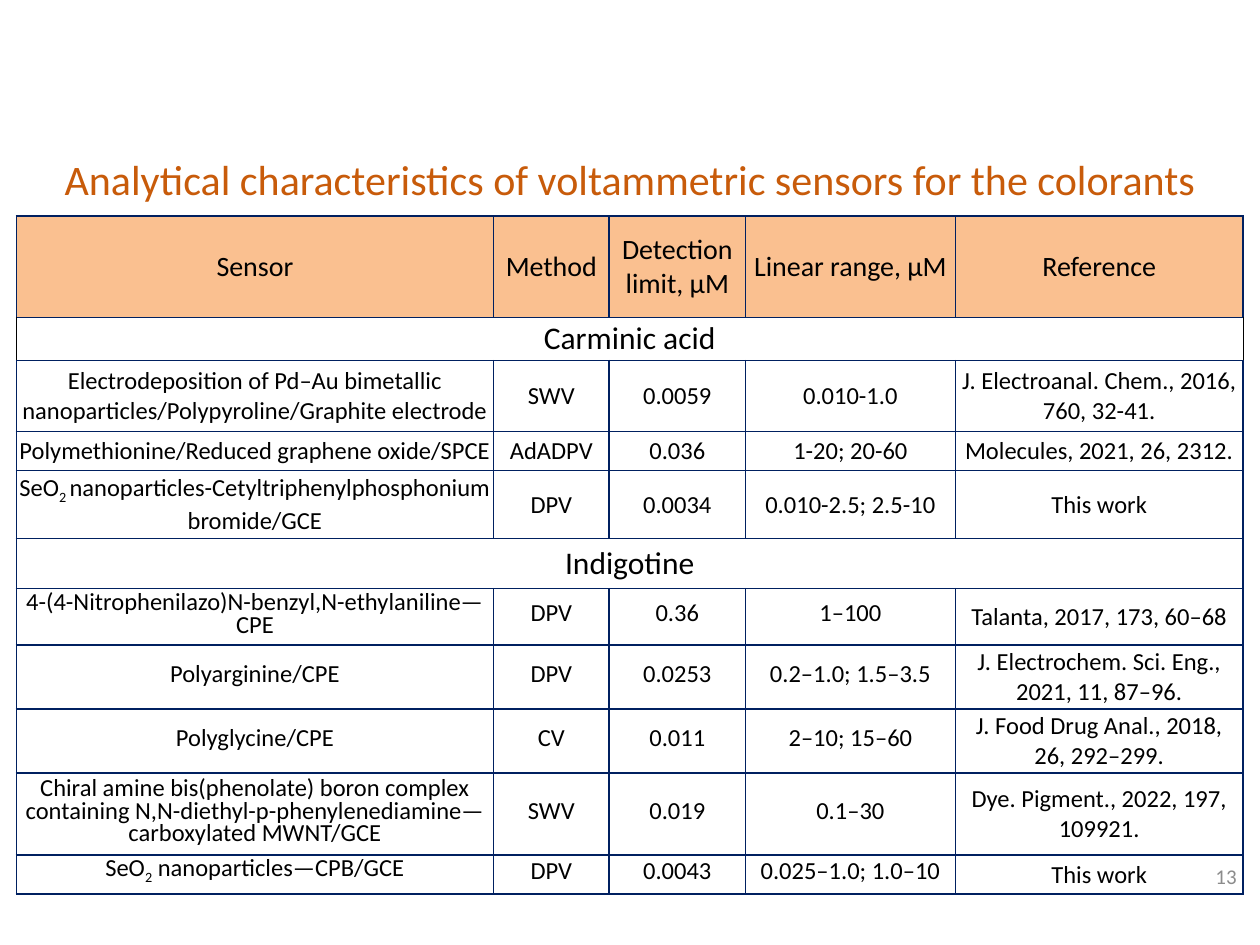
"""Build a slide with a table comparing voltammetric sensors for two colorants."""
from dataclasses import dataclass

from lxml.etree import SubElement
from pptx import Presentation
from pptx.dml.color import RGBColor as RGB
from pptx.enum.text import MSO_ANCHOR as Anchor, MSO_AUTO_SIZE as AutoSize, PP_ALIGN as Align
from pptx.oxml.ns import qn
from pptx.util import Cm, Pt

TITLE = "Analytical characteristics of voltammetric sensors for the colorants"
NUMBER = "13"
HEADER = ("Sensor", "Method", "Detection limit, μM", "Linear range, μM", "Reference")
CARMINIC = [
    ("Electrodeposition of Pd–Au bimetallic nanoparticles/Polypyroline/Graphite electrode",
     "SWV", "0.0059", "0.010-1.0", "J. Electroanal. Chem., 2016, 760, 32-41."),
    ("Polymethionine/Reduced graphene oxide/SPCE",
     "AdADPV", "0.036", "1-20; 20-60", "Molecules, 2021, 26, 2312."),
    ("SeO~2 ~nanoparticles-Cetyltriphenylphosphonium bromide/GCE",
     "DPV", "0.0034", "0.010-2.5; 2.5-10", "This work"),
]
INDIGOTINE = [
    ("4-(4-Nitrophenilazo)N-benzyl,N-ethylaniline—CPE",
     "DPV", "0.36", "1–100", "Talanta, 2017, 173, 60–68"),
    ("Polyarginine/CPE",
     "DPV", "0.0253", "0.2–1.0; 1.5–3.5", "J. Electrochem. Sci. Eng., 2021, 11, 87–96."),
    ("Polyglycine/CPE",
     "CV", "0.011", "2–10; 15–60", "J. Food Drug Anal., 2018, 26, 292–299."),
    ("Chiral amine bis(phenolate) boron complex containing "
     "N,N-diethyl-p-phenylenediamine—carboxylated MWNT/GCE",
     "SWV", "0.019", "0.1–30", "Dye. Pigment., 2022, 197, 109921."),
    ("SeO~2~ nanoparticles—CPB/GCE",
     "DPV", "0.0043", "0.025–1.0; 1.0–10", "This work"),
]
ROWS = [HEADER, ("Carminic acid",), *CARMINIC, ("Indigotine",), *INDIGOTINE]
TIGHT_FROM = ROWS.index(INDIGOTINE[0])
COL_WIDTHS = (9.62, 2.33, 2.75, 4.23, 5.8)
ROW_HEIGHTS = (2.05, 0.87, 1.43, 0.79, 1.36, 1.01, 1.14, 1.29, 1.29, 1.65, 0.79)
LEFT, WIDTH = 0.33, 24.74


@dataclass(frozen=True)
class Theme:
    font: str = "Calibri"
    title: str = "C85B0A"
    text: str = "000000"
    muted: str = "8C8C8C"
    border: str = "002060"
    header: str = "FAC090"
    title_pt: int = 24
    section_pt: int = 18
    header_pt: int = 16
    body_pt: int = 14
    number_pt: int = 12
    tight_pt: int = 13


T = Theme()


def put(tf, text, size=T.body_pt, color=T.text, align=Align.CENTER, spacing=None):
    tf.word_wrap = True
    p = tf.paragraphs[0]
    p.alignment = align
    if spacing:
        p.line_spacing = Pt(spacing)
    for i, part in enumerate(text.split("~")):
        r = p.add_run()
        r.text = part
        r.font.name, r.font.size = T.font, Pt(size)
        r.font.color.rgb = RGB.from_string(color)
        if i % 2:
            r._r.get_or_add_rPr().set("baseline", "-25000")


def add_borders(cell, side_color=T.border, side_pt=1):
    tc_pr = cell._tc.get_or_add_tcPr()
    for side in "LRTB":
        color, width = (side_color, side_pt) if side in "LR" else (T.border, 1)
        ln = SubElement(tc_pr, qn(f"a:ln{side}"), w=str(Pt(width)))
        SubElement(SubElement(ln, qn("a:solidFill")), qn("a:srgbClr"), val=color)


def format_cell(cell, row, col):
    tight = row >= TIGHT_FROM and col < len(HEADER) - 1
    cell.vertical_anchor = Anchor.MIDDLE
    inset = Cm(0 if tight else 0.05)
    cell.margin_left = cell.margin_right = cell.margin_top = cell.margin_bottom = inset
    if row == 1:
        add_borders(cell, T.text, 0.5)
    else:
        add_borders(cell)
    if row == 0:
        cell.fill.solid()
        cell.fill.fore_color.rgb = RGB.from_string(T.header)
    else:
        cell.fill.background()
    if col < len(ROWS[row]):
        size = T.header_pt if row == 0 else T.section_pt if len(ROWS[row]) == 1 else T.body_pt
        put(cell.text_frame, ROWS[row][col], size=size, spacing=T.tight_pt if tight else None)


def add_sensor_table(s):
    table = s.shapes.add_table(len(ROWS), len(HEADER), Cm(LEFT), Cm(4.35),
                               Cm(WIDTH), Cm(sum(ROW_HEIGHTS))).table
    table.first_row = table.horz_banding = False
    for column, width in zip(table.columns, COL_WIDTHS):
        column.width = Cm(width)
    for row, height in enumerate(ROW_HEIGHTS):
        table.rows[row].height = Cm(height)
        for col in range(len(HEADER)):
            format_cell(table.cell(row, col), row, col)
        if len(ROWS[row]) == 1:
            table.cell(row, 0).merge(table.cell(row, len(HEADER) - 1))


def main():
    prs = Presentation()
    prs.slide_width, prs.slide_height = Cm(25.4), Cm(19.05)
    s = prs.slides.add_slide(prs.slide_layouts[5])

    title = s.shapes.title
    title.left, title.top, title.width, title.height = Cm(LEFT), Cm(2.97), Cm(WIDTH), Cm(1.27)
    title.text_frame.auto_size = AutoSize.SHAPE_TO_FIT_TEXT
    title.text_frame.vertical_anchor = Anchor.MIDDLE
    put(title.text_frame, TITLE, size=T.title_pt, color=T.title)

    number = s.shapes.add_textbox(Cm(19.25), Cm(17.15), Cm(5.93), Cm(1.02))
    number.text_frame.vertical_anchor = Anchor.MIDDLE
    put(number.text_frame, NUMBER, size=T.number_pt, color=T.muted, align=Align.RIGHT)

    add_sensor_table(s)
    prs.save("out.pptx")


if __name__ == "__main__":
    main()
